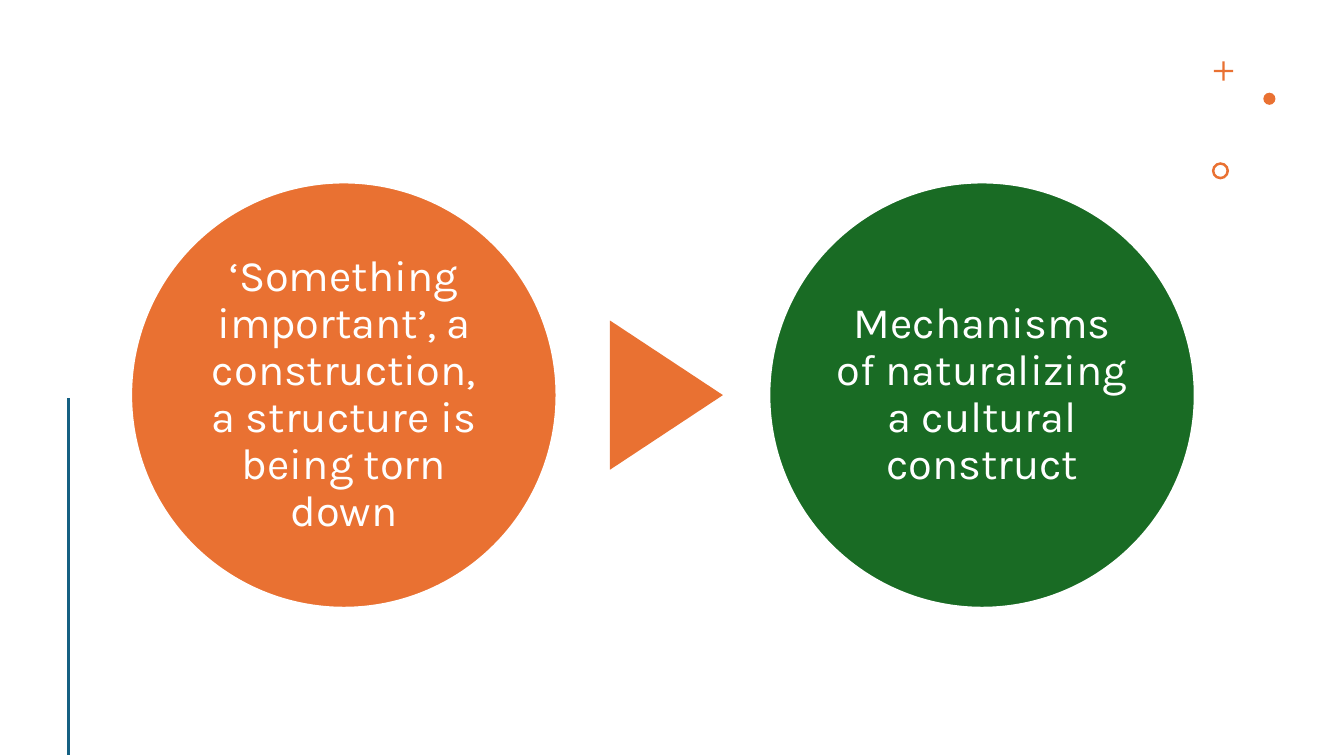
from lxml import etree
from pptx import Presentation
from pptx.dml.color import RGBColor
from pptx.enum.shapes import MSO_CONNECTOR, MSO_SHAPE
from pptx.enum.text import MSO_ANCHOR, PP_ALIGN
from pptx.oxml.ns import qn
from pptx.util import Inches, Pt

OVAL = MSO_SHAPE.OVAL
CROSS = MSO_SHAPE.CROSS
DONUT = MSO_SHAPE.DONUT
TRIANGLE = MSO_SHAPE.ISOSCELES_TRIANGLE
STRAIGHT = MSO_CONNECTOR.STRAIGHT
MIDDLE = MSO_ANCHOR.MIDDLE
CENTER = PP_ALIGN.CENTER

COLORS = {
    "orange": "E97132",
    "green": "196B24",
    "blue": "156082",
    "white": "FFFFFF",
}


def color(name):
    return RGBColor.from_string(COLORS[name])


def add_filled(kind, left, top, width, height, fill):
    """Add a preset shape with a plain fill, no outline and no shadow."""
    shape = page.shapes.add_shape(
        kind, Inches(left), Inches(top), Inches(width), Inches(height))
    shape.shadow.inherit = False
    shape.fill.solid()
    shape.fill.fore_color.rgb = color(fill)
    shape.line.fill.background()
    return shape


deck = Presentation()
deck.slide_width = Inches(13.33)
deck.slide_height = Inches(7.5)
page = deck.slides.add_slide(deck.slide_layouts[6])

# Corner ornaments
plus = add_filled(CROSS, 12.04, 0.61, 0.19, 0.19, "orange")
plus.adjustments[0] = 0.44
add_filled(OVAL, 12.53, 0.92, 0.12, 0.12, "orange")
ring = add_filled(DONUT, 12.02, 1.61, 0.17, 0.17, "orange")
ring.adjustments[0] = 0.15

# Vertical rule at the left edge
rule = page.shapes.add_connector(
    STRAIGHT, Inches(0.68), Inches(3.95), Inches(0.68), Inches(7.49))
rule.line.color.rgb = color("blue")
rule.line.width = Pt(2)
etree.SubElement(rule._element.spPr, qn("a:effectLst"))

# Two circles joined by a triangle
circles = [
    (1.3, "orange", "‘Something important’, a construction, a structure is being torn down"),
    (7.63, "green", "Mechanisms of naturalizing a cultural construct"),
]
for left, fill, text in circles:
    circle = add_filled(OVAL, left, 1.81, 4.22, 4.22, fill)
    circle.line.color.rgb = color("white")
    circle.line.width = Pt(1.5)
    frame = circle.text_frame
    frame.word_wrap = True
    frame.vertical_anchor = MIDDLE
    frame.margin_left = frame.margin_right = Inches(0.04)
    frame.margin_top = frame.margin_bottom = Inches(0.04)
    frame.text = text
    paragraph = frame.paragraphs[0]
    paragraph.alignment = CENTER
    paragraph.line_spacing = 0.9
    font = paragraph.runs[0].font
    font.name = "Karla"
    font.size = Pt(31)
    font.color.rgb = color("white")

pointer = add_filled(TRIANGLE, 5.87, 3.36, 1.48, 1.12, "orange")
pointer.rotation = 90

deck.save("out.pptx")
